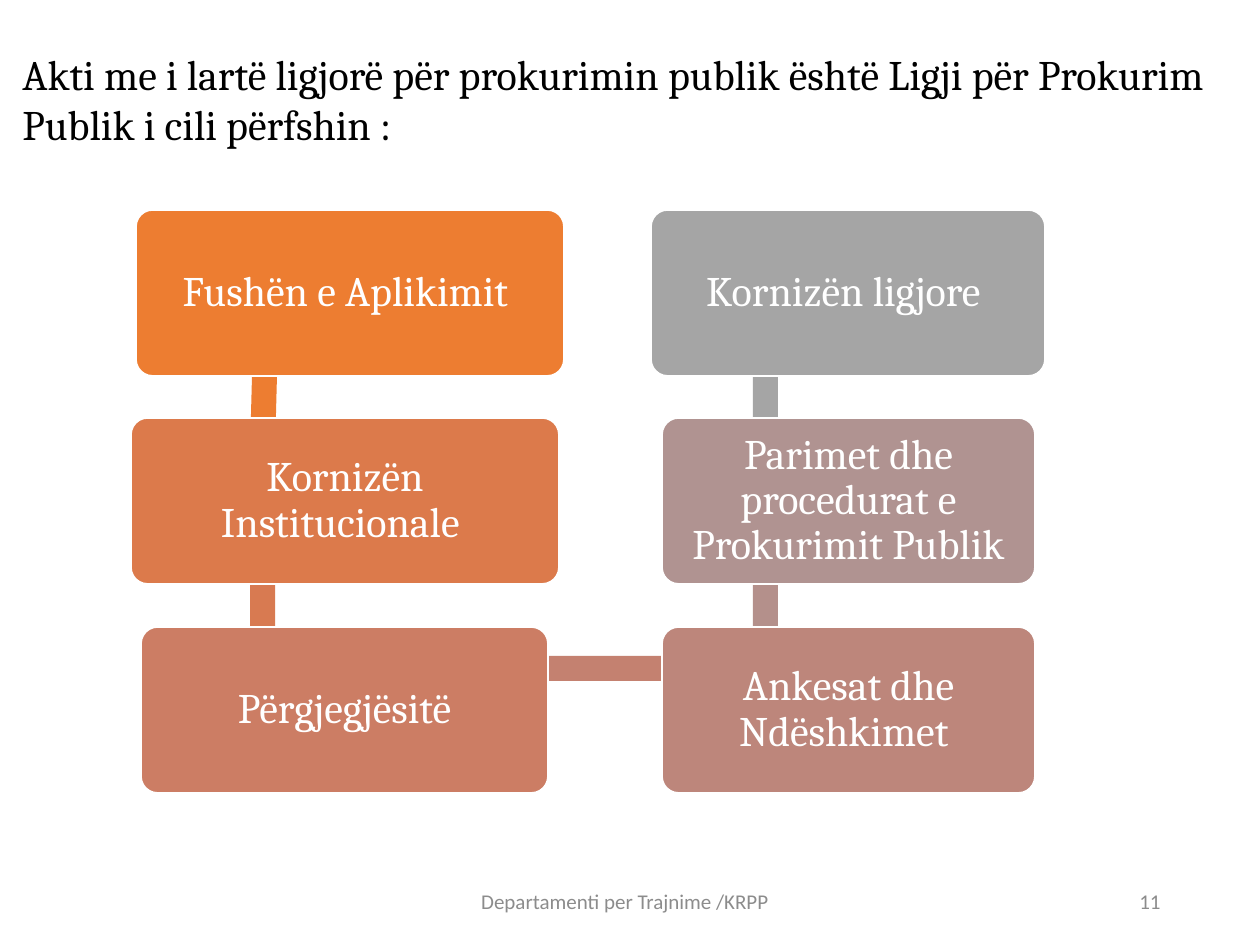
from pptx import Presentation
from pptx.dml.color import RGBColor
from pptx.enum.shapes import MSO_SHAPE
from pptx.enum.text import MSO_ANCHOR, PP_ALIGN
from pptx.util import Emu, Pt

RECT, ROUNDED = MSO_SHAPE.RECTANGLE, MSO_SHAPE.ROUNDED_RECTANGLE
TOP, MIDDLE = MSO_ANCHOR.TOP, MSO_ANCHOR.MIDDLE
LEFT, CENTER, RIGHT = PP_ALIGN.LEFT, PP_ALIGN.CENTER, PP_ALIGN.RIGHT

BLACK = RGBColor(0x00, 0x00, 0x00)
WHITE = RGBColor(0xFF, 0xFF, 0xFF)
MUTED = RGBColor(0x8C, 0x8C, 0x8C)
ORANGE = RGBColor(0xED, 0x7D, 0x31)
COPPER = RGBColor(0xDC, 0x7A, 0x4B)
COPPER_BAR = RGBColor(0xD8, 0x7A, 0x51)
CLAY = RGBColor(0xCC, 0x7D, 0x64)
CLAY_BAR = RGBColor(0xC4, 0x81, 0x70)
ROSE = RGBColor(0xBD, 0x86, 0x7B)
ROSE_BAR = RGBColor(0xB4, 0x90, 0x8B)
MAUVE = RGBColor(0xB0, 0x93, 0x91)
GRAY = RGBColor(0xA5, 0xA5, 0xA5)

CARD_TOPS = (210, 418, 627)
CARD_HEIGHT = 166
BAR_THICKNESS = 25
BAR_TOPS = (343, 552, 656)

CARDS = (
    ("Fushën e Aplikimit ", 136, 0, 428, ORANGE),
    ("Kornizën Institucionale ", 131, 1, 428, COPPER),
    ("Përgjegjësitë", 141, 2, 407, CLAY),
    ("Ankesat dhe Ndëshkimet ", 662, 2, 373, ROSE),
    ("Parimet dhe procedurat e Prokurimit Publik", 662, 1, 373, MAUVE),
    ("Kornizën ligjore ", 651, 0, 394, GRAY),
)
BARS = (
    (161, 0, 208, 91.5, ORANGE),
    (159, 1, 207, 90, COPPER_BAR),
    (263, 2, 500, 0, CLAY_BAR),
    (662, 1, 207, 270, ROSE_BAR),
    (662, 0, 207, 270, GRAY),
)


def px(length):
    return Emu(round(length * 914400 / 126))


def write(frame, text, size=24, font="Cambria", color=BLACK, align=LEFT,
          anchor=TOP, spacing=None):
    frame.word_wrap = True
    frame.vertical_anchor = anchor
    para = frame.paragraphs[0]
    para.alignment = align
    para.line_spacing = spacing
    span = para.add_run()
    span.text = text
    span.font.size = Pt(size)
    span.font.name = font
    span.font.color.rgb = color


class Page:
    """Draws the slide's elements in one shared style."""

    def __init__(self, deck):
        self.slide = deck.slides.add_slide(deck.slide_layouts[6])

    def text(self, text, left, top, width, height, **style):
        box = self.slide.shapes.add_textbox(px(left), px(top), px(width), px(height))
        write(box.text_frame, text, **style)

    def shape(self, kind, left, top, width, height, fill):
        shape = self.slide.shapes.add_shape(kind, px(left), px(top), px(width), px(height))
        shape.shadow.inherit = False
        shape.fill.solid()
        shape.fill.fore_color.rgb = fill
        return shape

    def bar(self, left, row, length, rotation, fill):
        bar = self.shape(RECT, left, BAR_TOPS[row], length, BAR_THICKNESS, fill)
        bar.line.fill.background()
        bar.rotation = rotation

    def card(self, text, left, row, width, fill):
        card = self.shape(ROUNDED, left, CARD_TOPS[row], width, CARD_HEIGHT, fill)
        card.adjustments[0] = 0.1
        card.line.color.rgb = WHITE
        card.line.width = Pt(1)
        frame = card.text_frame
        frame.margin_left = frame.margin_right = px(13)
        frame.margin_top = frame.margin_bottom = px(13)
        write(frame, text, color=WHITE, align=CENTER, anchor=MIDDLE, spacing=0.9)


def main():
    deck = Presentation()
    deck.slide_width, deck.slide_height = px(1260), px(945)
    page = Page(deck)
    footer = {"size": 12, "font": "Calibri", "color": MUTED, "anchor": MIDDLE}
    page.text("Departamenti per Trajnime /KRPP", 412, 876, 426, 50, align=CENTER, **footer)
    page.text("11", 890, 876, 283, 50, align=RIGHT, **footer)
    page.text("Akti me i lartë ligjorë për prokurimin publik është Ligji "
              "për Prokurim Publik i cili përfshin :", 10, 42, 1250, 624)
    for bar in BARS:
        page.bar(*bar)
    for card in CARDS:
        page.card(*card)
    deck.save("out.pptx")


if __name__ == "__main__":
    main()
